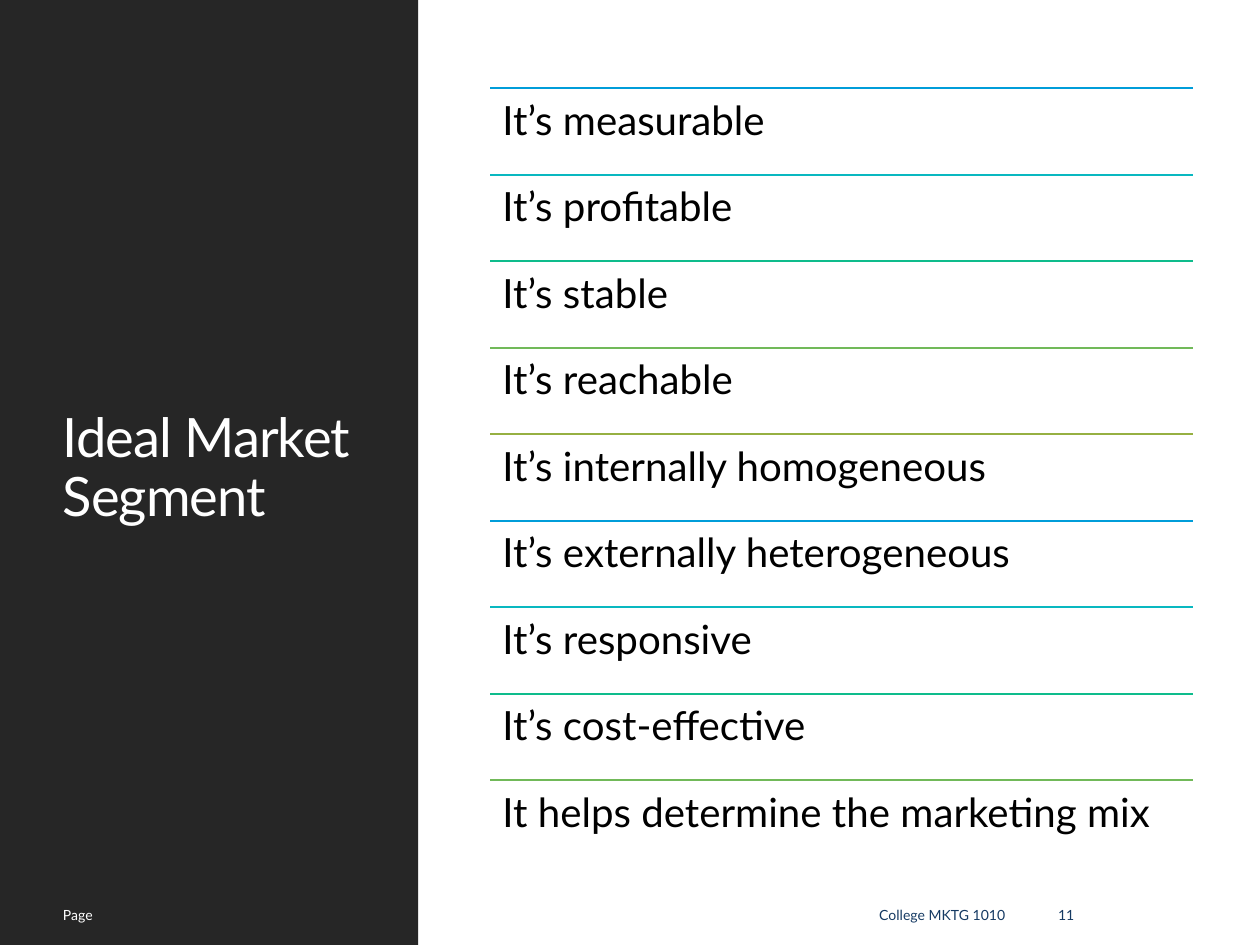
from dataclasses import dataclass
from itertools import cycle

from lxml import etree
from pptx import Presentation
from pptx import util as u
from pptx.dml.color import RGBColor
from pptx.enum import shapes, text
from pptx.oxml.ns import qn

FONT = "Lato"
COLOURS = {
    "white": "FFFFFF",
    "charcoal": "262626",
    "black": "000000",
    "navy": "153A63",
    "blue": "009DD9",
    "teal": "09B8C0",
    "green": "0EBC8C",
    "leaf": "71B959",
    "olive": "96B042",
}
RULE_COLOURS = ("blue", "teal", "green", "leaf", "olive")
CRITERIA = (
    "It’s measurable",
    "It’s profitable",
    "It’s stable",
    "It’s reachable",
    "It’s internally homogeneous",
    "It’s externally heterogeneous",
    "It’s responsive",
    "It’s cost-effective",
    "It helps determine the marketing mix",
)

# Lengths in centimetres
SLIDE_WIDTH, SLIDE_HEIGHT = 25.4, 19.05
SIDEBAR_WIDTH = 8.43
MARGIN = 1.02
LIST_LEFT, LIST_TOP = 9.88, 1.78
LIST_WIDTH, LIST_HEIGHT = 14.16, 15.69
FOOTER_TOP, FOOTER_HEIGHT = 17.93, 1.02
INSET = 0.25


@dataclass(frozen=True)
class Frame:
    left: float
    top: float
    width: float
    height: float

    def lengths(self) -> tuple:
        return tuple(u.Cm(n) for n in (self.left, self.top, self.width, self.height))


@dataclass(frozen=True)
class Label:
    words: str
    frame: Frame
    size: float
    colour: str
    anchor: text.MSO_ANCHOR = text.MSO_ANCHOR.MIDDLE
    align: text.PP_ALIGN = text.PP_ALIGN.LEFT
    line_spacing: float = 1.0
    inset_y: float = 0.13
    tracking: int = 0  # hundredths of a point


def rgb(name: str) -> RGBColor:
    return RGBColor.from_string(COLOURS[name])


def add_sidebar(slide) -> None:
    frame = Frame(0, 0, SIDEBAR_WIDTH, SLIDE_HEIGHT)
    panel = slide.shapes.add_shape(shapes.MSO_SHAPE.RECTANGLE, *frame.lengths())
    panel.shadow.inherit = False
    panel.fill.solid()
    panel.fill.fore_color.rgb = rgb("charcoal")
    panel.line.fill.background()


def add_label(slide, label: Label) -> None:
    box = slide.shapes.add_textbox(*label.frame.lengths())
    body = box.text_frame
    body.word_wrap = True
    body.vertical_anchor = label.anchor
    body.margin_left = body.margin_right = u.Cm(INSET)
    body.margin_top = body.margin_bottom = u.Cm(label.inset_y)
    paragraph = body.paragraphs[0]
    paragraph.alignment = label.align
    paragraph.line_spacing = label.line_spacing
    paragraph.font.name = FONT
    paragraph.font.size = u.Pt(label.size)
    paragraph.font.color.rgb = rgb(label.colour)
    span = paragraph.add_run()
    span.text = label.words
    if label.tracking:
        span.font._element.set("spc", str(label.tracking))


def add_rule(slide, top: float, colour: str) -> None:
    rule = slide.shapes.add_connector(
        shapes.MSO_CONNECTOR.STRAIGHT,
        u.Cm(LIST_LEFT), u.Cm(top), u.Cm(LIST_LEFT + LIST_WIDTH), u.Cm(top),
    )
    rule.line.color.rgb = rgb(colour)
    rule.line.width = u.Pt(1.25)
    etree.SubElement(rule._element.spPr, qn("a:effectLst"))


def add_criteria(slide) -> None:
    """Stack the criteria in equal rows, each under a coloured rule."""
    row_height = LIST_HEIGHT / len(CRITERIA)
    for row, (words, colour) in enumerate(zip(CRITERIA, cycle(RULE_COLOURS))):
        top = LIST_TOP + row * row_height
        add_rule(slide, top, colour)
        frame = Frame(LIST_LEFT, top, LIST_WIDTH, row_height)
        add_label(slide, Label(words, frame, 23, "black", text.MSO_ANCHOR.TOP,
                               line_spacing=0.9, inset_y=INSET))


def add_footer(slide) -> None:
    left_align, right_align = text.PP_ALIGN.LEFT, text.PP_ALIGN.RIGHT
    for words, left, width, colour, align in (
        ("Page", MARGIN, 3.6, "white", left_align),
        ("College MKTG 1010", LIST_LEFT, 10.64, "navy", right_align),
        ("11", 21.08, 2.26, "navy", left_align),
    ):
        frame = Frame(left, FOOTER_TOP, width, FOOTER_HEIGHT)
        add_label(slide, Label(words, frame, 8, colour, align=align))


def main() -> None:
    deck = Presentation()
    deck.slide_width, deck.slide_height = u.Cm(SLIDE_WIDTH), u.Cm(SLIDE_HEIGHT)
    page = deck.slides.add_slide(deck.slide_layouts[6])
    page.background.fill.solid()
    page.background.fill.fore_color.rgb = rgb("white")
    add_sidebar(page)
    add_label(page, Label("Ideal Market Segment", Frame(MARGIN, 1.45, 6.43, 16.03),
                          31, "white", line_spacing=0.9, tracking=-50))
    add_footer(page)
    add_criteria(page)
    deck.save("out.pptx")


if __name__ == "__main__":
    main()
